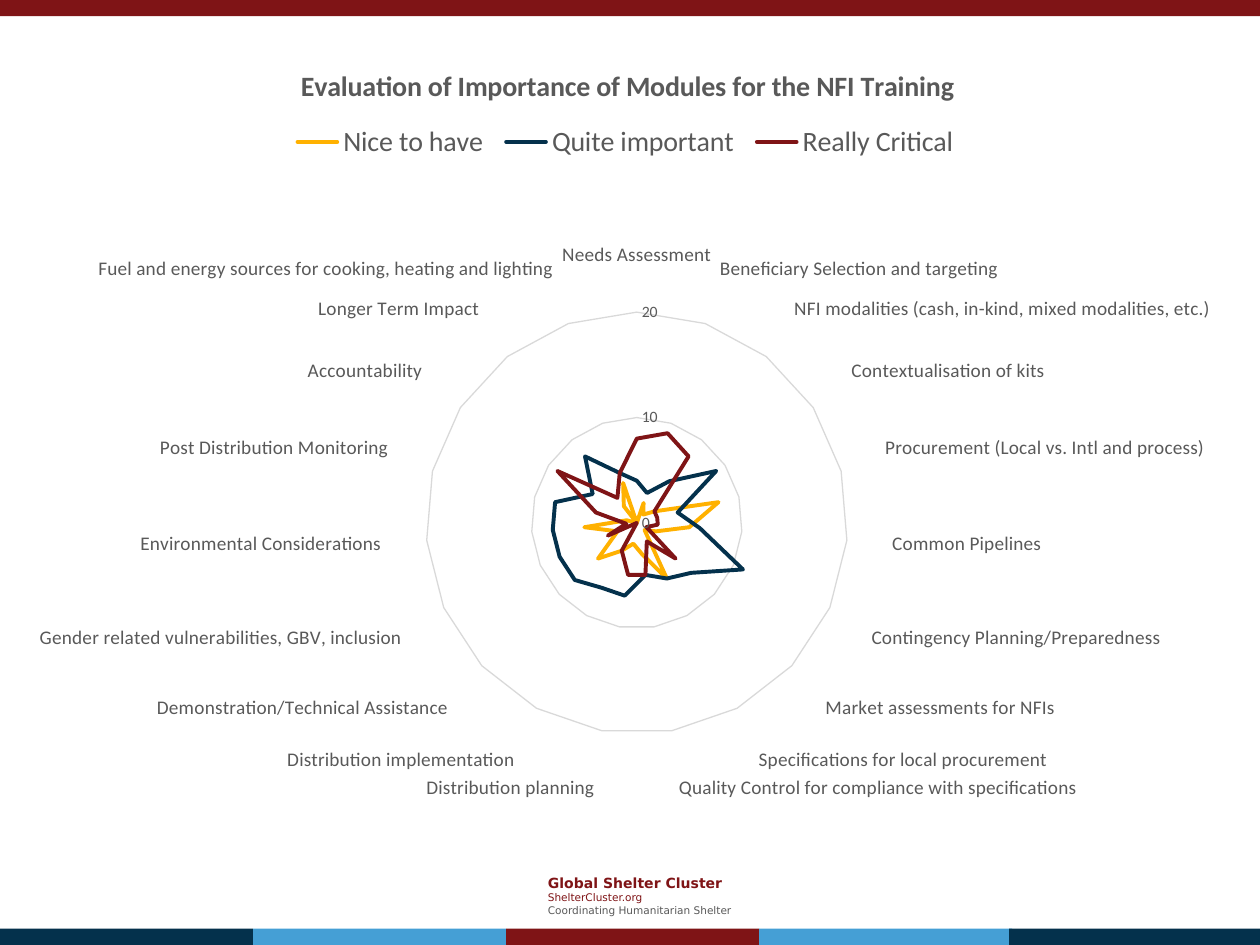
from dataclasses import dataclass

from lxml import etree
from pptx import Presentation
from pptx.chart.data import CategoryChartData
from pptx.dml.color import RGBColor
from pptx.enum.chart import XL_CHART_TYPE, XL_LEGEND_POSITION, XL_TICK_MARK
from pptx.enum.shapes import MSO_SHAPE
from pptx.enum.text import MSO_ANCHOR
from pptx.oxml.ns import qn
from pptx.util import Pt

RADAR = XL_CHART_TYPE.RADAR
LEGEND_TOP = XL_LEGEND_POSITION.TOP
NO_TICK = XL_TICK_MARK.NONE
RECT = MSO_SHAPE.RECTANGLE
MIDDLE = MSO_ANCHOR.MIDDLE

RED, NAVY, BLUE, YELLOW = "7F1416", "04314C", "459FD5", "FFB100"
GREY, LIGHT_GREY, BLACK = "595959", "D9D9D9", "000000"
BAR_W, BAR_H, LAST_BAR_X = 144.6, 9.2, 576.7


@dataclass
class Bar:
    x: float
    y: float
    w: float
    color: str


@dataclass
class Line:
    text: str
    size: float
    color: str
    bold: bool = False


@dataclass
class Rating:
    name: str
    color: str
    values: tuple


BARS = [Bar(0, 0, 720, RED)] + [
    Bar(min(i * BAR_W, LAST_BAR_X), 530.7, BAR_W, color)
    for i, color in enumerate((NAVY, BLUE, RED, BLUE, NAVY))
]

SIGNATURE = [
    Line("Global Shelter Cluster", 8, RED, True),
    Line("ShelterCluster.org", 6, RED),
    Line("Coordinating Humanitarian Shelter", 6, GREY),
]

TITLE = "Evaluation of Importance of Modules for the NFI Training"
MODULES = [
    "Needs Assessment",
    "Beneficiary Selection and targeting",
    "NFI modalities (cash, in-kind, mixed modalities, etc.)",
    "Contextualisation of kits",
    "Procurement (Local vs. Intl and process)",
    "Common Pipelines",
    "Contingency Planning/Preparedness",
    "Market assessments for NFIs",
    "Specifications for local procurement",
    "Quality Control for compliance with specifications",
    "Distribution planning",
    "Distribution implementation",
    "Demonstration/Technical Assistance",
    "Gender related vulnerabilities, GBV, inclusion",
    "Environmental Considerations",
    "Post Distribution Monitoring",
    "Accountability",
    "Longer Term Impact",
    "Fuel and energy sources for cooking, heating and lighting",
]
RATINGS = [
    Rating("Nice to have", YELLOW,
           (0, 2, 1, 2, 8, 5, 2, 1, 6, 3, 2, 3, 5, 2, 5, 1, 0, 2, 4)),
    Rating("Quite important", NAVY,
           (4, 3, 5, 9, 4, 6, 11, 7, 6, 5, 7, 7, 8, 8, 8, 8, 5, 8, 5)),
    Rating("Really Critical", RED,
           (8, 9, 8, 2, 2, 2, 1, 5, 2, 5, 5, 3, 0, 3, 1, 4, 9, 3, 5)),
]


def rgb(value: str) -> RGBColor:
    return RGBColor.from_string(value)


def set_font(font, size: float, color: str, name: str = "Calibri",
             bold: bool = False) -> None:
    for key, value in {"size": Pt(size), "name": name, "bold": bold}.items():
        setattr(font, key, value)
    font.color.rgb = rgb(color)


def set_line(line, color: str, width: float) -> None:
    line.color.rgb = rgb(color)
    line.width = Pt(width)


def add_bar(s, bar: Bar) -> None:
    sp = s.shapes.add_shape(RECT, Pt(bar.x), Pt(bar.y), Pt(bar.w), Pt(BAR_H))
    sp.shadow.inherit = False
    sp.fill.solid()
    sp.fill.fore_color.rgb = rgb(bar.color)
    sp.line.fill.background()


def add_signature(s, lines: list[Line]) -> None:
    tf = s.shapes.add_textbox(Pt(306), Pt(495.7), Pt(137), Pt(32)).text_frame
    settings = {"word_wrap": True, "vertical_anchor": MIDDLE,
                "margin_top": 0, "margin_bottom": 0}
    for key, value in settings.items():
        setattr(tf, key, value)
    for i, line in enumerate(lines):
        p = tf.add_paragraph() if i else tf.paragraphs[0]
        r = p.add_run()
        r.text = line.text
        set_font(r.font, line.size, line.color, "DejaVu Sans", line.bold)


def place(part, **fractions: float) -> None:
    """Give a chart part a manual layout, in fractions of the chart."""
    for old in part.findall(qn("c:layout")):
        part.remove(old)
    layout = etree.Element(qn("c:layout"))
    manual = etree.SubElement(layout, qn("c:manualLayout"))
    settings = {"xMode": "edge", "yMode": "edge"} | fractions
    for tag, value in settings.items():
        etree.SubElement(manual, qn(f"c:{tag}")).set("val", str(value))
    overlay = part.find(qn("c:overlay"))
    if overlay is None:
        part.insert(0, layout)
    else:
        overlay.addprevious(layout)


def add_radar(s) -> None:
    data = CategoryChartData()
    data.categories = MODULES
    for rating in RATINGS:
        data.add_series(rating.name, rating.values)
    chart = s.shapes.add_chart(
        RADAR, Pt(8.6), Pt(20.9), Pt(697.7), Pt(481.7), data).chart
    root = chart.element
    set_font(chart.font, 10, BLACK)

    # Title and legend
    chart.has_title = True
    p = chart.chart_title.text_frame.paragraphs[0]
    r = p.add_run()
    r.text = TITLE
    set_font(r.font, 16, GREY, bold=True)
    chart.has_legend = True
    legend = chart.legend
    legend.position = LEGEND_TOP
    legend.include_in_layout = False
    set_font(legend.font, 16, GREY)

    # Axes
    cat, val = chart.category_axis, chart.value_axis
    for axis, size in ((cat, 11), (val, 9)):
        axis.major_tick_mark = axis.minor_tick_mark = NO_TICK
        set_font(axis.tick_labels.font, size, GREY)
    cat.has_major_gridlines = False
    set_line(cat.format.line, LIGHT_GREY, 0.75)
    scale = {"minimum_scale": 0, "maximum_scale": 20, "major_unit": 10,
             "has_major_gridlines": True}
    for key, value in scale.items():
        setattr(val, key, value)
    set_line(val.major_gridlines.format.line, LIGHT_GREY, 0.75)
    val.format.line.fill.background()

    # Series, with round line ends
    for series, rating in zip(chart.plots[0].series, RATINGS):
        series.smooth = False
        set_line(series.format.line, rating.color, 2.25)
    for ser in root.iter(qn("c:ser")):
        ser.find(qn("c:spPr")).find(qn("a:ln")).set("cap", "rnd")

    # Positions
    place(root.find(".//" + qn("c:title")), x=0.23, y=0.03)
    place(root.find(".//" + qn("c:legend")), x=0.22, y=0.1, w=0.56, h=0.05)
    place(root.find(".//" + qn("c:plotArea")), x=0.02, y=0.17, w=0.96, h=0.81)


def main() -> None:
    prs = Presentation()
    prs.slide_width, prs.slide_height = Pt(720), Pt(540)
    s = prs.slides.add_slide(prs.slide_layouts[6])
    add_signature(s, SIGNATURE)
    for bar in BARS:
        add_bar(s, bar)
    add_radar(s)
    prs.save("out.pptx")


if __name__ == "__main__":
    main()
